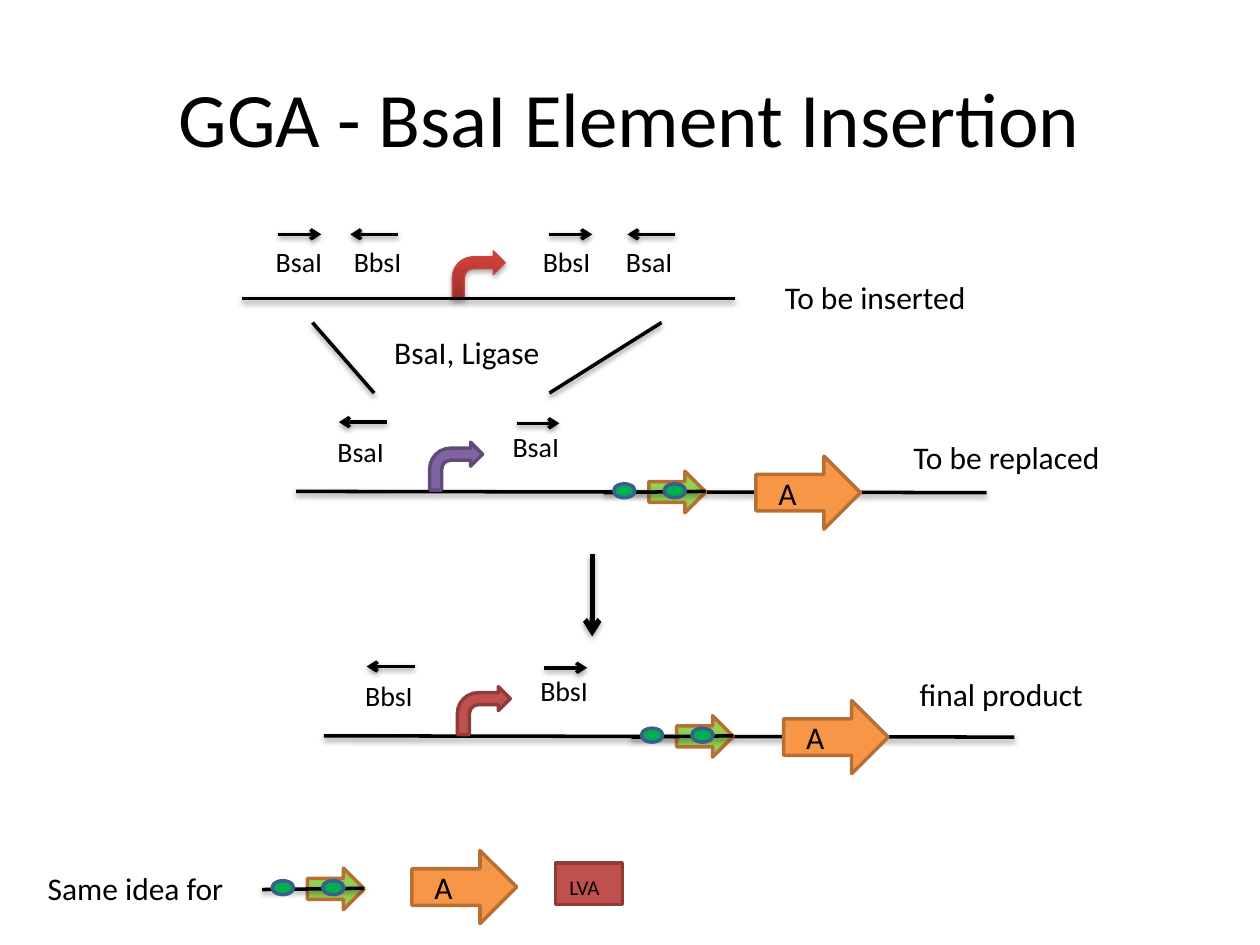
from lxml import etree
from pptx import Presentation
from pptx.dml.color import RGBColor
from pptx.enum import shapes, text
from pptx.oxml import ns
from pptx.util import Inches, Pt

COLUMNS, ROWS = 100, 75
WIDTH, HEIGHT = Inches(10), Inches(7.5)
COLORS = {
    "ink": "000000", "orange": "F79646", "orange_edge": "B76F34",
    "lime": "92D050", "green": "00B050", "blue_edge": "3A5F8C",
    "purple": "8064A2", "purple_edge": "5F4A78",
    "red": "C0504D", "red_edge": "8E3B39",
    "dark_red": "9C2F2D", "bright_red": "CB3E3A", "glow_edge": "BF4C48",
}
KIND = shapes.MSO_SHAPE


def color(name):
    """Return the named colour."""
    return RGBColor.from_string(COLORS[name])


def across(columns):
    """Return the length of a number of grid columns."""
    return round(WIDTH * columns / COLUMNS)


def down(rows):
    """Return the length of a number of grid rows."""
    return round(HEIGHT * rows / ROWS)


def frame(left, top, width, height):
    """Turn grid measures into slide lengths."""
    return across(left), down(top), across(width), down(height)


def add_child(parent, tag, **attributes):
    """Append a drawing element with attributes."""
    return etree.SubElement(parent, ns.qn(tag), attributes)


def cast_shadow(effects, opacity):
    """Fill an effect list with a soft shadow that falls down."""
    shadow = add_child(effects, "a:outerShdw", blurRad="40000", dist="20000",
                       dir="5400000", rotWithShape="0")
    ink = add_child(shadow, "a:srgbClr", val=COLORS["ink"])
    add_child(ink, "a:alpha", val=str(opacity * 1000))


def add_text(page, words, left, top, width=19.8, height=4, size=18,
             align=text.PP_ALIGN.LEFT, anchor=text.MSO_ANCHOR.TOP):
    """Add a text box."""
    box = page.shapes.add_textbox(*frame(left, top, width, height))
    box.text_frame.word_wrap = True
    box.text_frame.vertical_anchor = anchor
    para = box.text_frame.paragraphs[0]
    para.alignment = align
    span = para.add_run()
    span.text = words
    span.font.name = "Calibri"
    span.font.size = Pt(size)
    span.font.color.rgb = color("ink")


def add_line(page, start, end, weight=2, arrow=False, opacity=38):
    """Add a shadowed line, with an open arrowhead at its end if wanted."""
    line = page.shapes.add_connector(
        shapes.MSO_CONNECTOR.STRAIGHT, across(start[0]), down(start[1]),
        across(end[0]), down(end[1]))
    line.line.width = Pt(weight)
    line.line.color.rgb = color("ink")
    if arrow:
        add_child(line.line._get_or_add_ln(), "a:tailEnd", type="arrow")
    cast_shadow(add_child(line._element.spPr, "a:effectLst"), opacity)


def add_figure(page, kind, left, top, width, height, fill, edge, weight=2):
    """Add a filled and outlined preset shape."""
    figure = page.shapes.add_shape(kind, *frame(left, top, width, height))
    figure.shadow.inherit = False
    figure.fill.solid()
    figure.fill.fore_color.rgb = color(fill)
    figure.line.color.rgb = color(edge)
    figure.line.width = Pt(weight)
    return figure


def add_promoter(page, left, top, fill, edge, weight=2):
    """Add a bent promoter arrow."""
    return add_figure(page, KIND.BENT_ARROW, left, top, 4.2, 3.8, fill, edge, weight)


def add_glowing_promoter(page, left, top):
    """Add the promoter of the insert, with gradient and shadow."""
    promoter = add_promoter(page, left, top, "red", "glow_edge", 0.75)
    promoter.fill.gradient()
    promoter.fill.gradient_angle = 90
    stops = zip(promoter.fill.gradient_stops, ("dark_red", "bright_red"), (0, 0.8))
    for stop, name, position in stops:
        stop.color.rgb = color(name)
        stop.position = position
    cast_shadow(promoter._element.spPr.find(ns.qn("a:effectLst")), 35)


def add_gene(page, left, top):
    """Add the gene arrow with its letter."""
    add_figure(page, KIND.RIGHT_ARROW, left, top, 8.3, 5.8, "orange", "orange_edge")
    add_text(page, "A", left + 0.8, top + 0.9, width=3.3)


def add_recombination_unit(page, left, middle):
    """Add a lime arrow between two green sites on a short strand."""
    add_figure(page, KIND.RIGHT_ARROW, left + 3.6, middle - 1.7, 4.5, 3.3,
               "lime", "orange_edge")
    add_line(page, (left, middle), (left + 8.1, middle - 0.1))
    for offset in (4.8, 0.8):
        add_figure(page, KIND.OVAL, left + offset, middle - 0.7, 1.7, 1.1,
                   "green", "blue_edge")


def add_site(page, enzyme, left, top, start, end, arrow_row):
    """Add an enzyme name and the arrow of its cutting direction."""
    add_line(page, (start, arrow_row), (end, arrow_row), arrow=True)
    add_text(page, enzyme, left, top, width=7.7, height=6.7, size=16)


def add_construct(page, left, middle, enzyme, fill, edge):
    """Add a full strand with gene, promoter, sites and recombination unit."""
    add_line(page, (left, middle), (left + 54.8, middle + 0.1))
    add_gene(page, left + 36.5, middle - 2.8)
    add_promoter(page, left + 10.6, middle - 3.9, fill, edge)
    add_recombination_unit(page, left + 24.4, middle + 0.1)
    add_site(page, enzyme, left + 2.3, middle - 5, left + 7.2, left + 3.4, middle - 5.5)
    add_site(page, enzyme, left + 16.2, middle - 5.4, left + 17.5, left + 20.9, middle - 5.4)


def add_insert(page):
    """Add the strand to be inserted with its four sites."""
    add_glowing_promoter(page, 35.9, 19.9)
    add_line(page, (19.2, 23.7), (58.3, 23.7))
    sites = (("BsaI", 20.9, 22.1, 25.5), ("BbsI", 27.1, 31.6, 27.8),
             ("BbsI", 42.1, 43.6, 47), ("BsaI", 48.7, 53.6, 49.8))
    for enzyme, left, start, end in sites:
        add_site(page, enzyme, left, 18.9, start, end, 18.6)


def add_legend(page):
    """Add the row of other elements."""
    add_text(page, "Same idea for", 2.8, 68.5, width=32.9)
    add_recombination_unit(page, 20.8, 70.6)
    add_gene(page, 32.7, 67.5)
    add_figure(page, KIND.RECTANGLE, 44.1, 68.5, 5.3, 3.3, "red", "red_edge")
    add_text(page, "LVA", 44.2, 68.9, width=6, height=3, size=12)


def main():
    """Build the slide and save it."""
    deck = Presentation()
    deck.slide_width, deck.slide_height = WIDTH, HEIGHT
    page = deck.slides.add_slide(deck.slide_layouts[6])
    add_text(page, "GGA - BsaI Element Insertion", 5, 3, 90, 12.5, size=44,
             align=text.PP_ALIGN.CENTER, anchor=text.MSO_ANCHOR.MIDDLE)
    add_insert(page)
    add_line(page, (24.8, 25.6), (29.7, 31.2))
    add_line(page, (43.6, 31.2), (52.5, 25.6))
    add_text(page, "BsaI, Ligase", 30.3, 25.9, width=14.1)
    add_construct(page, 23.5, 39, "BsaI", "purple", "purple_edge")
    add_line(page, (47, 44), (47, 50.5), weight=3, arrow=True, opacity=35)
    add_construct(page, 25.7, 58.4, "BbsI", "red", "red_edge")
    for words, left, top in (("To be inserted", 61.3, 21.6),
                             ("To be replaced", 71.5, 34.3),
                             ("final product", 72, 53.1)):
        add_text(page, words, left, top)
    add_legend(page)
    deck.save("out.pptx")


if __name__ == "__main__":
    main()
